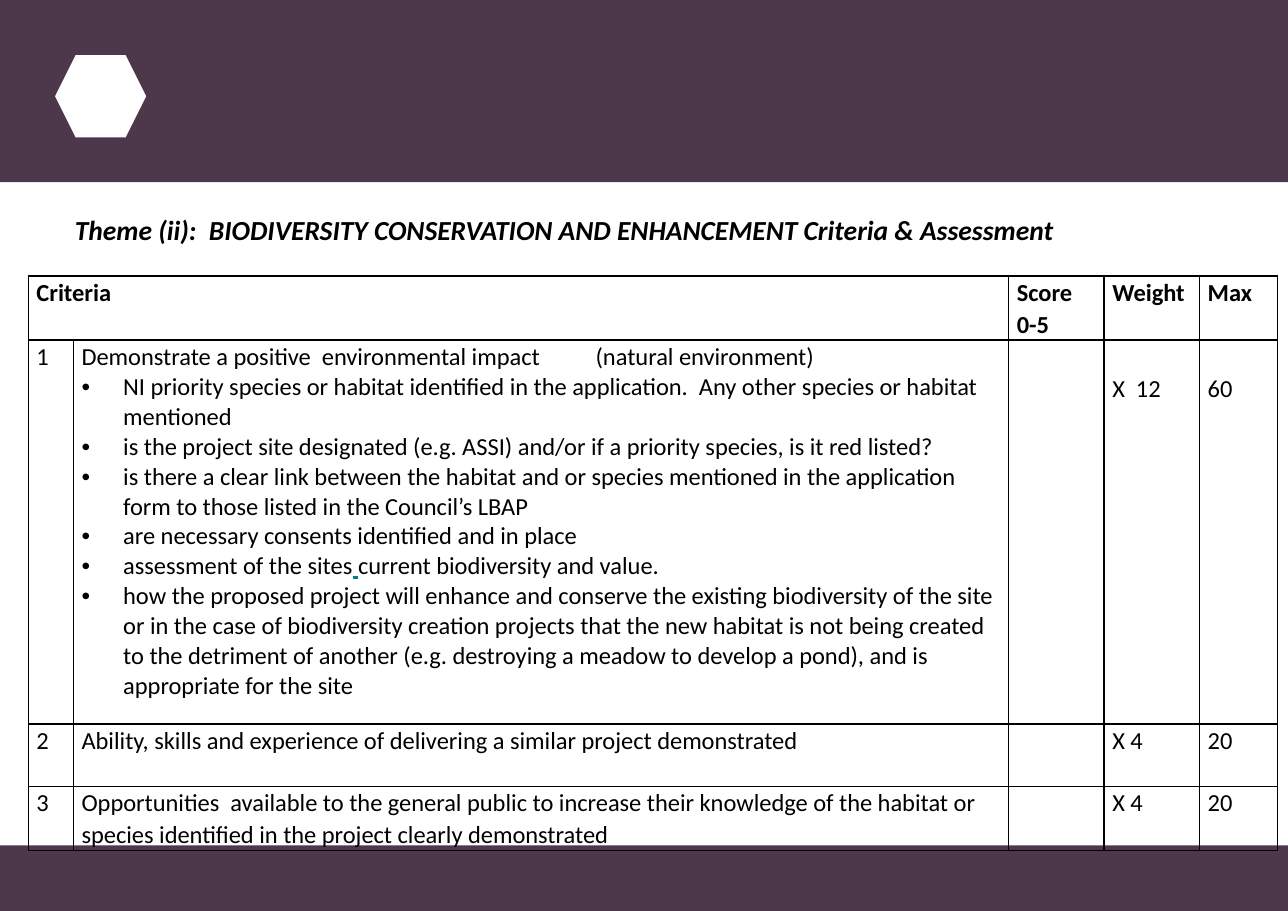
from lxml.etree import SubElement
from pptx import Presentation
from pptx.dml.color import RGBColor
from pptx.enum.shapes import MSO_SHAPE as Shape
from pptx.enum.text import MSO_ANCHOR as Anchor, MSO_AUTO_SIZE as AutoSize, PP_ALIGN as Align
from pptx.oxml.ns import qn
from pptx.util import Cm, Pt

PLUM, WHITE, BLACK, TEAL = "4C374B", "FFFFFF", "000000", "008080"
FONT = "Calibri"
PAGE_WIDTH, PAGE_HEIGHT = 29.69, 21.0
HEADER_HEIGHT, FOOTER_HEIGHT = 4.2, 1.51
THEME = "Theme (ii):  BIODIVERSITY CONSERVATION AND ENHANCEMENT Criteria & Assessment"

IMPACT = "Demonstrate a positive  environmental impact\t(natural environment)"
# Each point is a list of runs; a single space is the underlined one.
IMPACT_POINTS = [
    ["NI priority species or habitat identified in the application.  "
     "Any other species or habitat mentioned"],
    ["is the project site designated (e.g. ASSI) and/or if a priority species, is it red listed?"],
    ["is there a clear link between the habitat and or species mentioned in the application "
     "form to those listed in the Council’s LBAP"],
    ["are necessary consents identified and in place"],
    ["assessment of the sites", " ", "current biodiversity and value."],
    ["how the proposed project will enhance and conserve the existing biodiversity of the site "
     "or in the case of biodiversity creation projects that the new habitat is not being created "
     "to the detriment of another (e.g. destroying a meadow to develop a pond), and is "
     "appropriate for the site"],
]
CRITERIA = [
    ["Criteria", "", "Score 0-5", "Weight", "Max"],
    ["1", IMPACT, "", "X  12", "60"],
    ["2", "Ability, skills and experience of delivering a similar project demonstrated",
     "", "X 4", "20"],
    ["3", "Opportunities  available to the general public to increase their knowledge of the "
     "habitat or species identified in the project clearly demonstrated", "", "X 4", "20"],
]
COLUMN_WIDTHS = [1.04, 21.56, 2.2, 2.2, 1.8]
ROW_HEIGHTS = [1.44, 8.85, 1.44, 1.44]
TABLE_LEFT, TABLE_TOP = 0.65, 6.36
IMPACT_ROW, FIRST_SCORING_COLUMN = 1, 3
LINE_DROP = 0.74
BULLET_INDENT = 0.96
IMPACT_TAB = 11.85


def rgb(code):
    return RGBColor.from_string(code)


def add_plain(slide, kind, left, top, width, height, color):
    shape = slide.shapes.add_shape(kind, Cm(left), Cm(top), Cm(width), Cm(height))
    shape.shadow.inherit = False
    shape.fill.solid()
    shape.fill.fore_color.rgb = rgb(color)
    shape.line.fill.background()


def add_run(paragraph, text, size=16, bold=False, italic=False, color=BLACK, underline=False):
    run = paragraph.add_run()
    run.text = text
    font = run.font
    font.name, font.size = FONT, Pt(size)
    font.bold, font.italic, font.underline = bold, italic, underline
    font.color.rgb = rgb(color)


def add_point(frame, runs):
    paragraph = frame.add_paragraph()
    props = paragraph._p.get_or_add_pPr()
    props.set("marL", str(Cm(BULLET_INDENT)))
    props.set("indent", str(-Cm(BULLET_INDENT)))
    SubElement(props, qn("a:buFont"), typeface="Arial")
    SubElement(props, qn("a:buChar"), char="•")
    for text in runs:
        gap = text == " "
        add_run(paragraph, text, color=TEAL if gap else BLACK, underline=gap)


def add_tab(paragraph, position):
    tabs = SubElement(paragraph._p.get_or_add_pPr(), qn("a:tabLst"))
    SubElement(tabs, qn("a:tab"), pos=str(Cm(position)), algn="l")


def style_cell(cell):
    cell.margin_left = cell.margin_right = Cm(0.19)
    cell.margin_top = cell.margin_bottom = 0
    props = cell._tc.get_or_add_tcPr()
    for side in ("lnL", "lnR", "lnT", "lnB"):
        line = SubElement(props, qn(f"a:{side}"), w=str(Pt(1)))
        fill = SubElement(line, qn("a:solidFill"))
        SubElement(fill, qn("a:srgbClr"), val=BLACK)
    cell.fill.background()


def add_theme_title(slide):
    title = slide.shapes.title
    title.left, title.top, title.width, title.height = Cm(1.47), Cm(4.78), Cm(25.4), Cm(1.03)
    frame = title.text_frame
    frame.word_wrap = True
    frame.auto_size = AutoSize.NONE
    frame.vertical_anchor = Anchor.MIDDLE
    paragraph = frame.paragraphs[0]
    paragraph.alignment = Align.LEFT
    add_run(paragraph, THEME, size=18, bold=True, italic=True)


def add_criteria_table(slide):
    table = slide.shapes.add_table(
        len(ROW_HEIGHTS), len(COLUMN_WIDTHS), Cm(TABLE_LEFT), Cm(TABLE_TOP),
        Cm(sum(COLUMN_WIDTHS)), Cm(sum(ROW_HEIGHTS))).table
    table.first_row = table.horz_banding = False
    for column, width in zip(table.columns, COLUMN_WIDTHS):
        column.width = Cm(width)
    for row, height in zip(table.rows, ROW_HEIGHTS):
        row.height = Cm(height)
    for r, texts in enumerate(CRITERIA):
        for c, text in enumerate(texts):
            cell = table.cell(r, c)
            style_cell(cell)
            if not text:
                continue
            paragraph = cell.text_frame.paragraphs[0]
            paragraph.line_spacing = 1.07
            if text == IMPACT:
                add_tab(paragraph, IMPACT_TAB)
            add_run(paragraph, text, bold=r == 0)
            if r == IMPACT_ROW and c >= FIRST_SCORING_COLUMN:
                cell.margin_top = Cm(LINE_DROP)
    table.cell(0, 0).merge(table.cell(0, 1))
    for point in IMPACT_POINTS:
        add_point(table.cell(IMPACT_ROW, 1).text_frame, point)


def main():
    deck = Presentation()
    deck.slide_width, deck.slide_height = Cm(PAGE_WIDTH), Cm(PAGE_HEIGHT)
    slide = deck.slides.add_slide(deck.slide_layouts[5])
    add_plain(slide, Shape.RECTANGLE, 0, 0, PAGE_WIDTH, HEADER_HEIGHT, PLUM)
    add_plain(slide, Shape.HEXAGON, 1.27, 1.27, 2.1, 1.9, WHITE)
    add_plain(slide, Shape.RECTANGLE, 0, PAGE_HEIGHT - FOOTER_HEIGHT,
              PAGE_WIDTH, FOOTER_HEIGHT, PLUM)
    add_theme_title(slide)
    add_criteria_table(slide)
    deck.save("out.pptx")


if __name__ == "__main__":
    main()
